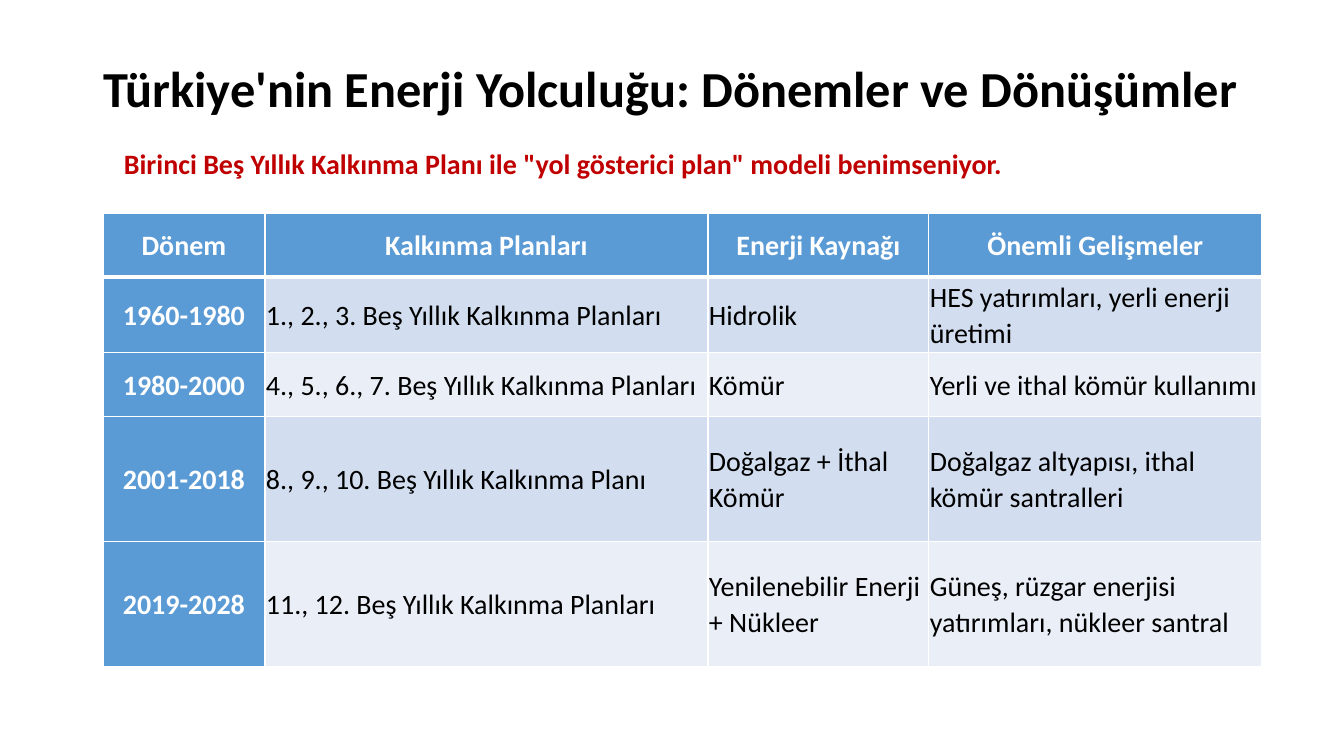
from lxml import etree
from pptx import Presentation
from pptx import util as u
from pptx.dml.color import RGBColor
from pptx.enum import text
from pptx.oxml import ns

PX = 914400 / 100.8
FONT = "Calibri"
BLACK = RGBColor(0x00, 0x00, 0x00)
WHITE = RGBColor(0xFF, 0xFF, 0xFF)
RED = RGBColor(0xC0, 0x00, 0x00)
BLUE = RGBColor(0x5B, 0x9B, 0xD5)
BANDS = [RGBColor(0xD2, 0xDE, 0xEF), RGBColor(0xEA, 0xEF, 0xF7)]

COLUMN_WIDTHS = [162, 443, 221, 333]
ROW_HEIGHTS = [64, 64, 64, 125, 125]
PERIODS = [
    ["Dönem", "Kalkınma Planları", "Enerji Kaynağı", "Önemli Gelişmeler"],
    ["1960-1980", "1., 2., 3. Beş Yıllık Kalkınma Planları", "Hidrolik",
     "HES yatırımları, yerli enerji üretimi"],
    ["1980-2000", "4., 5., 6., 7. Beş Yıllık Kalkınma Planları", "Kömür",
     "Yerli ve ithal kömür kullanımı"],
    ["2001-2018", "8., 9., 10. Beş Yıllık Kalkınma Planı", "Doğalgaz + İthal Kömür",
     "Doğalgaz altyapısı, ithal kömür santralleri"],
    ["2019-2028", "11., 12. Beş Yıllık Kalkınma Planları", "Yenilenebilir Enerji + Nükleer",
     "Güneş, rüzgar enerjisi yatırımları, nükleer santral"],
]


def px(length):
    return u.Emu(round(length * PX))


def write(text_frame, content, size, color, bold, align=text.PP_ALIGN.LEFT, spacing=1.0):
    text_frame.text = content
    paragraph = text_frame.paragraphs[0]
    paragraph.alignment = align
    paragraph.line_spacing = spacing
    font = paragraph.runs[0].font
    font.name = FONT
    font.size = u.Pt(size)
    font.bold = bold
    font.color.rgb = color


def add_title(slide, content):
    title = slide.shapes.title
    title.left, title.top, title.width, title.height = map(px, (93, 40, 1159, 102))
    text_frame = title.text_frame
    write(text_frame, content, 36, BLACK, True, spacing=0.9)
    text_frame.auto_size = text.MSO_AUTO_SIZE.NONE
    text_frame.vertical_anchor = text.MSO_ANCHOR.MIDDLE


def add_subtitle(slide, content):
    box = slide.shapes.add_textbox(*map(px, (114, 142, 1098, 44)))
    box.text_frame.word_wrap = True
    write(box.text_frame, content, 20, RED, True)


def set_borders(cell, top, bottom):
    properties = cell._tc.get_or_add_tcPr()
    widths = [("lnL", 1), ("lnR", 1), ("lnT", top), ("lnB", bottom)]
    for position, (tag, width) in enumerate(widths):
        line = etree.Element(ns.qn(f"a:{tag}"), w=str(u.Pt(width)))
        fill = etree.SubElement(line, ns.qn("a:solidFill"))
        etree.SubElement(fill, ns.qn("a:srgbClr"), val=str(WHITE))
        properties.insert(position, line)


def format_cell(cell, content, row, column):
    heading = row == 0 or column == 0
    cell.margin_left = cell.margin_right = px(1)
    cell.margin_top = cell.margin_bottom = px(1)
    cell.vertical_anchor = text.MSO_ANCHOR.MIDDLE
    cell.fill.solid()
    cell.fill.fore_color.rgb = BLUE if heading else BANDS[(row - 1) % 2]
    align = text.PP_ALIGN.CENTER if heading else text.PP_ALIGN.LEFT
    write(cell.text_frame, content, 20, WHITE if heading else BLACK, heading, align, 1.07)
    set_borders(cell, 3 if row == 1 else 1, 3 if row == 0 else 1)


def add_period_table(slide):
    frame = slide.shapes.add_table(
        len(ROW_HEIGHTS), len(COLUMN_WIDTHS), px(103), px(213),
        px(sum(COLUMN_WIDTHS)), px(sum(ROW_HEIGHTS)))
    table = frame.table
    table.first_col = True
    for column, width in zip(table.columns, COLUMN_WIDTHS):
        column.width = px(width)
    for row, height in zip(table.rows, ROW_HEIGHTS):
        row.height = px(height)
    for row, contents in enumerate(PERIODS):
        for column, content in enumerate(contents):
            format_cell(table.cell(row, column), content, row, column)


def main():
    presentation = Presentation()
    presentation.slide_width = px(1344)
    presentation.slide_height = px(756)
    slide = presentation.slides.add_slide(presentation.slide_layouts[5])
    add_title(slide, "Türkiye'nin Enerji Yolculuğu: Dönemler ve Dönüşümler")
    add_period_table(slide)
    add_subtitle(slide, 'Birinci Beş Yıllık Kalkınma Planı ile "yol gösterici plan" modeli benimseniyor.')
    presentation.save("out.pptx")


if __name__ == "__main__":
    main()
